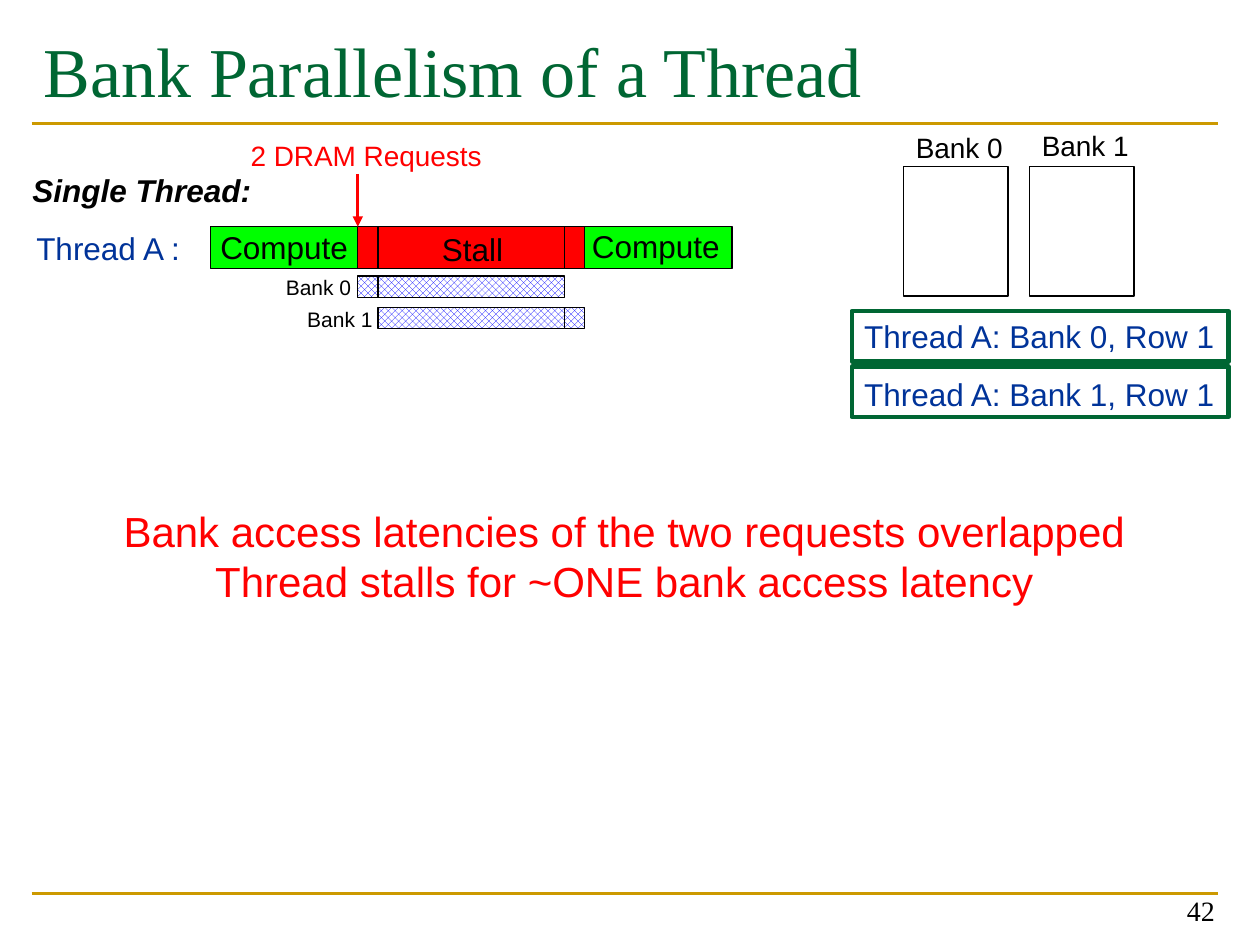
from lxml import etree
from pptx import Presentation
from pptx import util as u
from pptx.dml.color import RGBColor
from pptx.enum import dml, shapes, text
from pptx.oxml.ns import qn

COLORS = {
    "gold": "CC9900", "dark_green": "006633", "navy": "003399", "red": "FF0000",
    "green": "00FF00", "blue": "0000FF", "black": "000000", "white": "FFFFFF",
}
WIDTH, HEIGHT = 10, 7.5
MARGIN_LEFT, MARGIN_RIGHT = 0.25, 9.67
RULES = [0.98, 7.09]

LEFT, CENTER, RIGHT = text.PP_ALIGN.LEFT, text.PP_ALIGN.CENTER, text.PP_ALIGN.RIGHT

COMPUTE, OFFSET, ACCESS = 1.17, 0.16, 1.48
START = 1.67
REQUEST = START + COMPUTE
TIMELINES = [
    (START, 1.8, 0.33, [(COMPUTE, "green"), (OFFSET, "red"), (ACCESS, "red"),
                        (OFFSET, "red"), (COMPUTE, "green")]),
    (REQUEST, 2.19, 0.17, [(OFFSET, "checked"), (ACCESS, "checked")]),
    (REQUEST + OFFSET, 2.44, 0.17, [(ACCESS, "checked"), (OFFSET, "checked")]),
]

BANKS = [("Bank 0", 0.99), ("Bank 1", 0.97)]
BANK_LEFT, BANK_PITCH = 7.17, 1
ROW_REQUESTS = ["Thread A: Bank 0, Row 1", "Thread A: Bank 1, Row 1"]
ROW_LEFT, ROW_TOP, ROW_PITCH = 6.76, 2.47, 0.44

LABELS = [
    ("Compute", 1.65, 1.76, 1.24, 0.41, 18, "black"),
    ("Compute", 4.6, 1.75, 1.24, 0.41, 18, "black"),
    ("Stall", 3.41, 1.78, 0.7, 0.41, 18, "black"),
    ("2 DRAM Requests", 1.89, 1.05, 2.08, 0.37, 16, "red"),
    ("Bank 0", 2.17, 2.13, 0.73, 0.3, 12, "black"),
    ("Bank 1", 2.34, 2.38, 0.73, 0.3, 12, "black"),
]
CONCLUSION = [
    "Bank access latencies of the two requests overlapped",
    "Thread stalls for ~ONE bank access latency",
]


def color(name):
    return RGBColor.from_string(COLORS[name])


def add_text(page, lines, left, top, width, height, size, ink, font="Arial",
             align=LEFT, wrap=True, anchor=text.MSO_ANCHOR.TOP, bold=False, italic=False):
    box = page.shapes.add_textbox(*map(u.Inches, (left, top, width, height)))
    frame = box.text_frame
    frame.word_wrap = wrap
    frame.vertical_anchor = anchor
    frame.text = "\n".join(lines)
    for para in frame.paragraphs:
        para.alignment = align
        para.font.name = font
        para.font.size = u.Pt(size)
        para.font.bold, para.font.italic = bold, italic
        para.font.color.rgb = color(ink)
    return box


def add_rectangle(page, left, top, width, height, fill=None, line="black", weight=0.75):
    box = page.shapes.add_shape(shapes.MSO_SHAPE.RECTANGLE,
                                *map(u.Inches, (left, top, width, height)))
    box.shadow.inherit = False
    box.line.color.rgb = color(line)
    box.line.width = u.Pt(weight)
    if fill is None:
        box.fill.background()
    elif fill == "checked":
        box.fill.patterned()
        box.fill.pattern = dml.MSO_PATTERN.LARGE_CHECKER_BOARD
        box.fill.fore_color.rgb = color("blue")
        box.fill.back_color.rgb = color("white")
    else:
        box.fill.solid()
        box.fill.fore_color.rgb = color(fill)


def add_line(page, x1, y1, x2, y2, ink, weight, arrow=False):
    line = page.shapes.add_connector(shapes.MSO_CONNECTOR.STRAIGHT,
                                     *map(u.Inches, (x1, y1, x2, y2)))
    line.line.color.rgb = color(ink)
    line.line.width = u.Pt(weight)
    if arrow:
        etree.SubElement(line.line._get_or_add_ln(), qn("a:tailEnd"), type="triangle")
    etree.SubElement(line._element.spPr, qn("a:effectLst"))


def add_header_and_footer(page):
    for y in RULES:
        add_line(page, MARGIN_LEFT, y, MARGIN_RIGHT, y, "gold", 1.5)
    add_text(page, ["Bank Parallelism of a Thread"], MARGIN_LEFT, 0.17,
             MARGIN_RIGHT - MARGIN_LEFT, 1.17, 40, "dark_green", "Times New Roman")
    add_text(page, ["42"], 7.41, 6.91, 2.33, 0.5, 16, "black", "Times New Roman",
             RIGHT, anchor=text.MSO_ANCHOR.BOTTOM)


def add_banks(page):
    for column, (name, top) in enumerate(BANKS):
        left = BANK_LEFT + column * BANK_PITCH
        add_rectangle(page, left, 1.32, 0.83, 1.03)
        add_text(page, [name], left, top, 0.9, 0.37, 16, "black")
    for row, request in enumerate(ROW_REQUESTS):
        top = ROW_TOP + row * ROW_PITCH
        add_text(page, [request], ROW_LEFT, top + row * 0.02, 3.05, 0.41, 18, "navy",
                 wrap=False)
        add_rectangle(page, ROW_LEFT, top, 2.99, 0.4, line="dark_green", weight=2.5)


def add_timelines(page):
    for left, top, height, segments in TIMELINES:
        for width, fill in segments:
            add_rectangle(page, left, top, width, height, fill)
            left += width
    add_line(page, REQUEST, 1.38, REQUEST, 1.8, "red", 1.75, arrow=True)
    for label, *place in LABELS:
        add_text(page, [label], *place)
    add_text(page, ["Thread A :"], 0.19, 1.77, 1.37, 0.41, 18, "navy", wrap=False)
    add_text(page, ["Single Thread:"], 0.16, 1.31, 2.43, 0.41, 18, "black",
             bold=True, italic=True)


def main():
    deck = Presentation()
    deck.slide_width, deck.slide_height = u.Inches(WIDTH), u.Inches(HEIGHT)
    page = deck.slides.add_slide(deck.slide_layouts[6])
    add_header_and_footer(page)
    conclusion = add_text(page, CONCLUSION, 0.84, 3.96, 8.23, 0.91, 24, "red",
                          align=CENTER, wrap=False)
    conclusion.fill.solid()
    conclusion.fill.fore_color.rgb = color("white")
    add_banks(page)
    add_timelines(page)
    deck.save("out.pptx")


if __name__ == "__main__":
    main()
